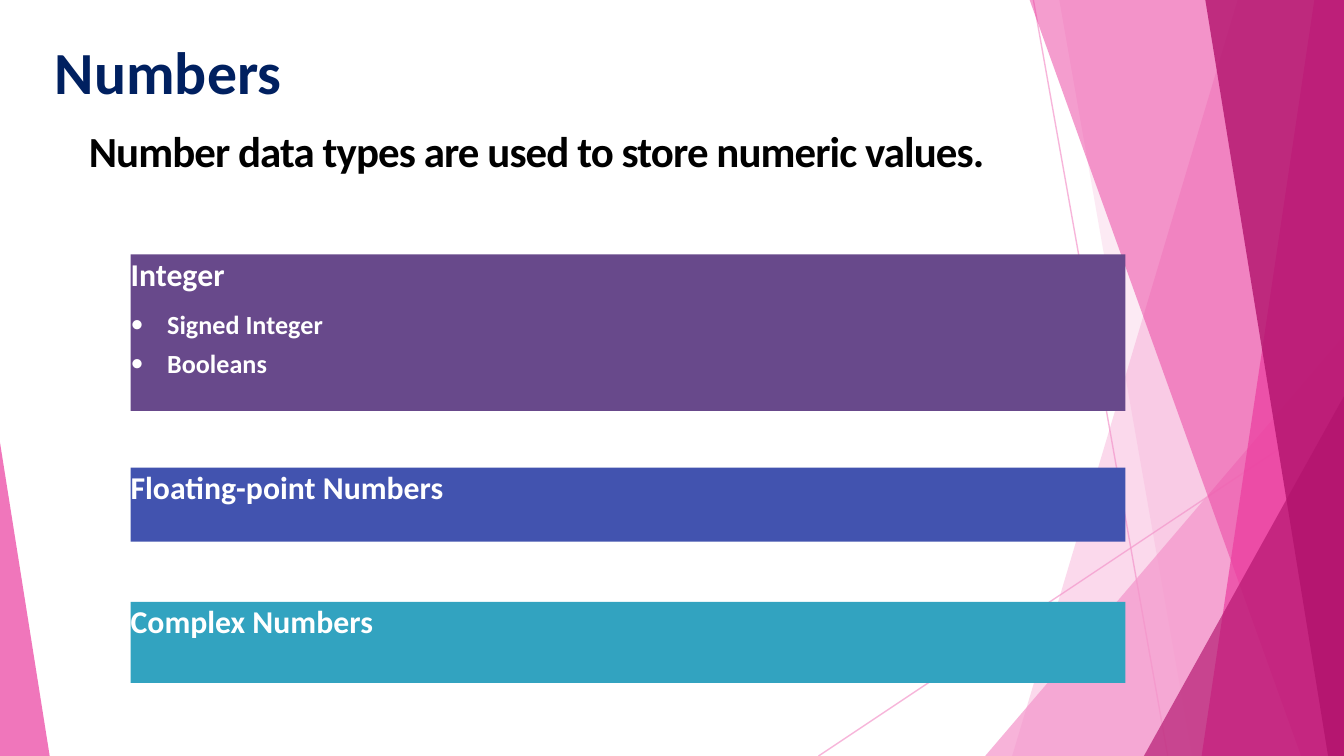
from lxml import etree
from pptx import Presentation
from pptx.dml.color import RGBColor
from pptx.enum import shapes, text
from pptx.oxml import ns
from pptx.util import Cm, Pt

COLORS = {
    "pale_pink": "F496CB", "pink": "EB3D9F", "magenta": "B2136D",
    "navy": "002060", "black": "000000", "white": "FFFFFF",
    "purple": "68498B", "blue": "4253AF", "teal": "32A3C0",
}
FONT = "Calibri"
SLIDE_WIDTH, SLIDE_HEIGHT = 25.4, 14.29


def rgb(name):
    """Return the named colour."""
    return RGBColor.from_string(COLORS[name])


def set_alpha(part, percent):
    """Make every colour of a part's outline or fill partly transparent."""
    for color in part.element.spPr.iter(ns.qn("a:srgbClr")):
        etree.SubElement(color, ns.qn("a:alpha")).set("val", str(percent * 1000))


def paint(part, color, alpha=None):
    """Give a shape a flat fill with no outline or shadow."""
    part.shadow.inherit = False
    part.fill.solid()
    part.fill.fore_color.rgb = rgb(color)
    part.line.fill.background()
    if alpha is not None:
        set_alpha(part, alpha)


def add_ray(slide, start, end):
    """Draw a thin translucent line."""
    ray = slide.shapes.add_connector(
        shapes.MSO_CONNECTOR.STRAIGHT, *(Cm(value) for value in start + end))
    ray.line.color.rgb = rgb("pale_pink")
    ray.line.width = Pt(0.75)
    set_alpha(ray, 70)
    etree.SubElement(ray.element.spPr, ns.qn("a:effectLst"))


def add_facet(slide, box, top_x, bottom_x, color, alpha):
    """Fill the box from a slanted left side to its right edge."""
    left, top, width, height = box
    right, bottom = left + width, top + height
    corners = [(left + top_x, top), (right, top),
               (right, bottom), (left + bottom_x, bottom)]
    points = [(Cm(x), Cm(y)) for x, y in corners]
    outline = slide.shapes.build_freeform(*points[0], scale=1.0)
    outline.add_line_segments(points[1:], close=True)
    paint(outline.convert_to_shape(), color, alpha)


def add_wedge(slide, box, x, y, width, apex, color, alpha):
    """Stand a right-angled triangle on the bottom of the box."""
    left, top, _, height = box
    wedge = slide.shapes.add_shape(
        shapes.MSO_SHAPE.ISOSCELES_TRIANGLE,
        Cm(left + x), Cm(top + y), Cm(width), Cm(height - y))
    wedge.adjustments[0] = apex
    paint(wedge, color, alpha)


def add_backdrop(slide, box):
    """Layer the rays, facets and wedges along the slide's sides."""
    left, top, width, height = box
    add_ray(slide, (left + 19.53, top), (left + 22.07, top + height))
    add_ray(slide, (left + width, top + 7.67), (left + 15.47, top + height))
    layers = [
        (add_facet, 23.39, 19.13, "pale_pink", 36),
        (add_facet, 20.02, 22.53, "pale_pink", 20),
        (add_wedge, 18.62, 6.35, 6.78, 1, "pale_pink", 72),
        (add_facet, 19.46, 24.59, "pink", 50),
        (add_facet, 24.84, 22.71, "pink", 70),
        (add_facet, 22.78, 25.1, "magenta", 80),
        (add_wedge, 21.62, 7.49, 3.78, 1, "magenta", 66),
        (add_wedge, 0, 8.36, 0.94, 0, "pink", 70),
    ]
    for draw, *details in layers:
        draw(slide, box, *details)


def prepare_frame(part):
    """Return a top-anchored, wrapping text frame without margins."""
    frame = part.text_frame
    frame.margin_left = frame.margin_top = 0
    frame.margin_right = frame.margin_bottom = 0
    frame.word_wrap = True
    frame.vertical_anchor = text.MSO_ANCHOR.TOP
    return frame


def add_words(paragraph, words, size, color):
    """Add one bold run to a left-aligned paragraph."""
    paragraph.alignment = text.PP_ALIGN.LEFT
    run = paragraph.add_run()
    run.text = words
    run.font.name = FONT
    run.font.size = Pt(size)
    run.font.bold = True
    run.font.color.rgb = rgb(color)
    return run


def add_heading(slide, box):
    """Write the title with its explanation below."""
    frame = prepare_frame(slide.shapes.add_textbox(*(Cm(value) for value in box)))
    title = frame.paragraphs[0]
    title.space_after = Pt(8.4)
    add_words(title, "Numbers", 32, "navy")
    explanation = frame.add_paragraph()
    explanation.line_spacing = Pt(28.8)
    properties = explanation._p.get_or_add_pPr()
    properties.set("marL", str(Cm(0.64)))
    properties.set("indent", "0")
    run = add_words(explanation, "Number data types are used to store numeric values.",
                    23, "black")
    run.font._element.set("spc", "-50")


def add_band(slide, box, color, heading, kinds=()):
    """Draw a coloured band naming a number type and its kinds."""
    band = slide.shapes.add_shape(
        shapes.MSO_SHAPE.RECTANGLE, *(Cm(value) for value in box))
    paint(band, color)
    frame = prepare_frame(band)
    frame.paragraphs[0].space_after = Pt(8.4 if kinds else 0)
    add_words(frame.paragraphs[0], heading, 17, "white")
    for kind in kinds:
        item = frame.add_paragraph()
        item.space_after = Pt(4.2)
        add_words(item, kind, 14, "white")
        properties = item._p.get_or_add_pPr()
        properties.set("marL", str(Cm(0.69)))
        properties.set("indent", str(-Cm(0.69)))
        etree.SubElement(properties, ns.qn("a:buFont")).set("typeface", FONT)
        etree.SubElement(properties, ns.qn("a:buChar")).set("char", "•")


def add_number_types(slide, box):
    """Stack the bands of number types in the box."""
    left, top, width, _ = box
    bands = [
        (0, 2.96, "purple", "Integer", ("Signed Integer", "Booleans")),
        (4.03, 1.4, "blue", "Floating-point Numbers"),
        (6.57, 1.53, "teal", "Complex Numbers"),
    ]
    for offset, height, *content in bands:
        add_band(slide, (left, top + offset, width, height), *content)


def main():
    """Build and save the slide."""
    deck = Presentation()
    deck.slide_width, deck.slide_height = Cm(SLIDE_WIDTH), Cm(SLIDE_HEIGHT)
    slide = deck.slides.add_slide(deck.slide_layouts[6])
    add_backdrop(slide, (0, 0, SLIDE_WIDTH, SLIDE_HEIGHT))
    add_heading(slide, (1.04, 0.66, 18.24, 3.33))
    add_number_types(slide, (2.47, 4.81, 18.8, 8.1))
    deck.save("out.pptx")


if __name__ == "__main__":
    main()
